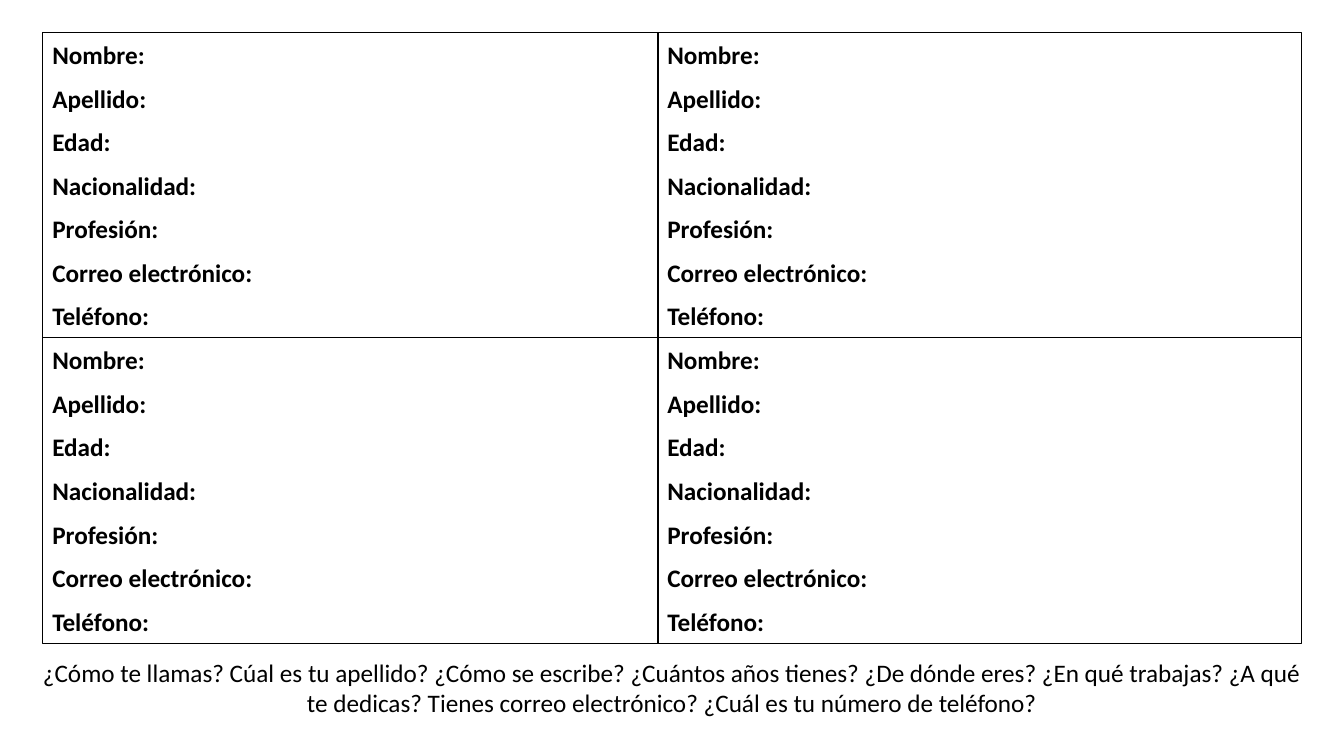
import pptx
import pptx.util
import pptx.dml.color
import pptx.enum.shapes
import pptx.enum.text

Inches = pptx.util.Inches
Pt = pptx.util.Pt
HUES = {"ink": "000000"}
INK = pptx.dml.color.RGBColor.from_string(HUES["ink"])
COLS = [(0.42, 6.11), (6.52, 6.39)]
TOP, HIGH = 0.32, 3.03
FIELDS = ["Nombre:", "Apellido:", "Edad:", "Nacionalidad:", "Profesión:",
          "Correo electrónico:", "Teléfono:"]
ASKS = ("¿Cómo te llamas? Cúal es tu apellido? ¿Cómo se escribe? "
        "¿Cuántos años tienes? ¿De dónde eres? ¿En qué trabajas? "
        "¿A qué te dedicas? Tienes correo electrónico? "
        "¿Cuál es tu número de teléfono?")


def style(para, bold):
    para.font.name = "Calibri"
    para.font.size = Pt(18)
    para.font.bold = bold
    para.font.color.rgb = INK


deck = pptx.Presentation()
deck.slide_width = Inches(13.33)
deck.slide_height = Inches(7.5)
slide = deck.slides.add_slide(deck.slide_layouts[6])

for row in range(2):
    for left, width in COLS:
        card = slide.shapes.add_shape(
            pptx.enum.shapes.MSO_SHAPE.RECTANGLE, Inches(left),
            Inches(TOP + row * HIGH), Inches(width), Inches(HIGH))
        card.shadow.inherit = False
        card.fill.background()
        card.line.color.rgb = INK
        card.line.width = Pt(0.75)
        frame = card.text_frame
        frame.word_wrap = True
        frame.auto_size = pptx.enum.text.MSO_AUTO_SIZE.SHAPE_TO_FIT_TEXT
        frame.vertical_anchor = pptx.enum.text.MSO_ANCHOR.TOP
        frame.text = "\n".join(FIELDS)
        for para in frame.paragraphs:
            para.alignment = pptx.enum.text.PP_ALIGN.LEFT
            para.line_spacing = 1.07
            para.space_after = Pt(8)
            style(para, True)

box = slide.shapes.add_textbox(Inches(0.31), Inches(6.47), Inches(12.71), Inches(0.71))
frame = box.text_frame
frame.word_wrap = True
frame.auto_size = pptx.enum.text.MSO_AUTO_SIZE.SHAPE_TO_FIT_TEXT
frame.text = ASKS
para = frame.paragraphs[0]
para.alignment = pptx.enum.text.PP_ALIGN.CENTER
style(para, False)

deck.save("out.pptx")
